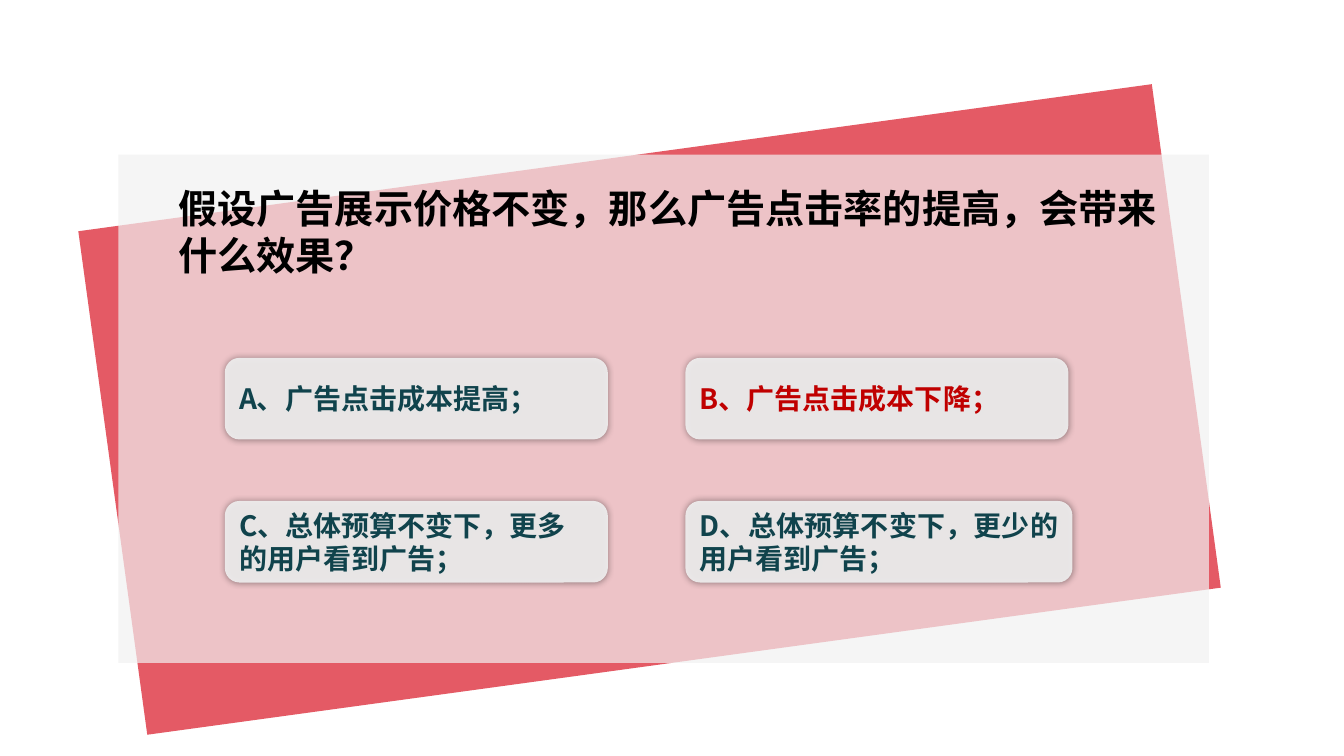
from lxml import etree
from pptx import Presentation
from pptx.dml.color import RGBColor
from pptx.enum.shapes import MSO_SHAPE
from pptx.enum.text import MSO_ANCHOR, MSO_AUTO_SIZE, PP_ALIGN
from pptx.oxml.ns import qn
from pptx.util import Pt

RECTANGLE = MSO_SHAPE.RECTANGLE
ROUNDED = MSO_SHAPE.ROUNDED_RECTANGLE
TOP, MIDDLE = MSO_ANCHOR.TOP, MSO_ANCHOR.MIDDLE
FIXED = MSO_AUTO_SIZE.NONE
LEFT, JUSTIFY = PP_ALIGN.LEFT, PP_ALIGN.JUSTIFY

RED = RGBColor(0xD9, 0x15, 0x24)
PALE_GREY = RGBColor(0xF1, 0xF1, 0xF1)
BLACK = RGBColor(0, 0, 0)
TEAL = RGBColor(0x10, 0x43, 0x4C)
ANSWER_RED = RGBColor(0xC0, 0, 0)


class QuizSlide:
    font_name = "Noto Sans CJK SC"

    def __init__(self, deck):
        self.slide = deck.slides.add_slide(deck.slide_layouts[5])

    def panel(self, kind, box, color, opacity, rotation=0):
        panel = self.slide.shapes.add_shape(kind, *map(Pt, box))
        panel.rotation = rotation
        panel.shadow.inherit = False
        panel.line.fill.background()
        panel.fill.solid()
        panel.fill.fore_color.rgb = color
        tint = panel._element.spPr.find(f"{qn('a:solidFill')}/{qn('a:srgbClr')}")
        etree.SubElement(tint, qn("a:alpha"), val=str(opacity * 1000))
        return panel

    def wording(self, holder, words, size, color, anchor, align=LEFT):
        frame = holder.text_frame
        frame_format = {"word_wrap": True, "auto_size": FIXED, "vertical_anchor": anchor}
        for attribute, value in frame_format.items():
            setattr(frame, attribute, value)
        paragraph = frame.paragraphs[0]
        paragraph.alignment = align
        run = paragraph.add_run()
        run.text = words
        run.font.color.rgb = color
        for attribute, value in {"size": Pt(size), "bold": True, "name": self.font_name}.items():
            setattr(run.font, attribute, value)
        etree.SubElement(run.font._element, qn("a:ea"), typeface=self.font_name)

    def question(self, words, box):
        title = self.slide.shapes.title
        for attribute, value in zip(("left", "top", "width", "height"), box):
            setattr(title, attribute, Pt(value))
        self.wording(title, words, 28, BLACK, TOP)
        title._element.getparent().append(title._element)

    def option(self, words, box, color=TEAL, align=LEFT):
        card = self.panel(ROUNDED, box, PALE_GREY, 90)
        card.adjustments[0] = 0.18
        effects = card._element.spPr.find(qn("a:effectLst"))
        shadow = etree.SubElement(effects, qn("a:outerShdw"), blurRad=str(Pt(5)),
                                  dist="0", dir="0", algn="ctr", rotWithShape="0")
        shade = etree.SubElement(shadow, qn("a:srgbClr"), val=str(BLACK))
        etree.SubElement(shade, qn("a:alpha"), val="40000")
        self.wording(card, words, 20, color, MIDDLE, align)


def main():
    deck = Presentation()
    deck.slide_width, deck.slide_height = Pt(960), Pt(540)
    quiz = QuizSlide(deck)
    quiz.panel(RECTANGLE, (77, 111, 774, 363), RED, 70, 352.2)
    quiz.panel(RECTANGLE, (84.5, 110.5, 779, 363), PALE_GREY, 70)
    quiz.question("假设广告展示价格不变，那么广告点击率的提高，会带来什么效果？",
                  (120.2, 128.2, 714.2, 75))

    options = [
        ("A、广告点击成本提高；", 273.6, TEAL, LEFT),
        ("B、广告点击成本下降；", 273.6, ANSWER_RED, LEFT),
        ("C、总体预算不变下，更多的用户看到广告；", 273.6, TEAL, LEFT),
        ("D、总体预算不变下，更少的用户看到广告；", 276.5, TEAL, JUSTIFY),
    ]
    for index, (words, width, color, align) in enumerate(options):
        row, column = divmod(index, 2)
        box = (160.6 + 329 * column, 255.6 + 102.2 * row, width, 58.3)
        quiz.option(words, box, color, align)

    deck.save("out.pptx")


if __name__ == "__main__":
    main()
